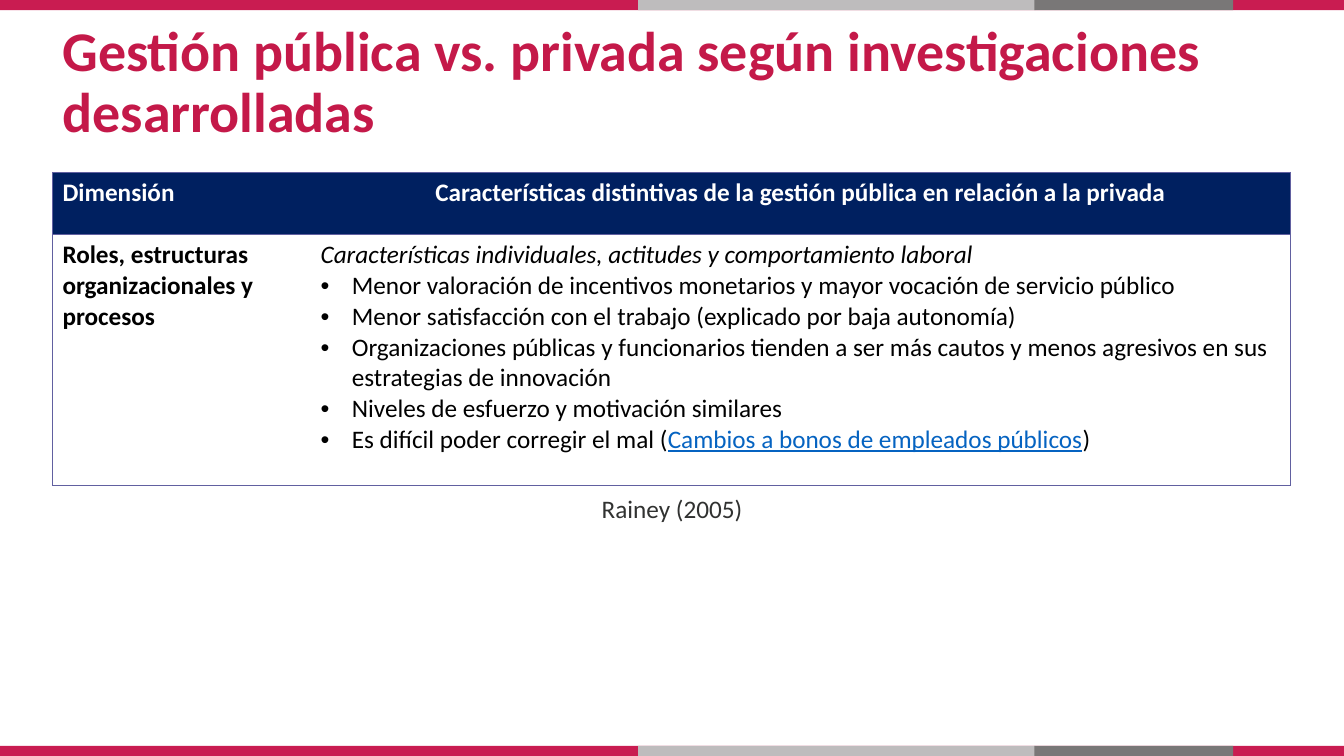
from lxml import etree
from pptx import Presentation
from pptx.dml.color import RGBColor
from pptx.enum.shapes import MSO_SHAPE
from pptx.enum.text import MSO_ANCHOR, MSO_AUTO_SIZE, PP_ALIGN
from pptx.oxml.ns import qn
from pptx.util import Inches, Pt

COLORS = {
    "crimson": "C91C51",
    "title": "C41949",
    "light_gray": "BEBCBD",
    "dark_gray": "797777",
    "navy": "002060",
    "border": "6160A0",
    "white": "FFFFFF",
    "black": "000000",
    "source": "313231",
    "link": "0563C1",
}
SLIDE_WIDTH, SLIDE_HEIGHT = 13.33, 7.5
BAND_HEIGHT = 0.1
HEADERS = ["Dimensión", "Características distintivas de la gestión pública en relación a la privada"]
DIMENSION = "Roles, estructuras organizacionales y procesos"
SUBHEADING = "Características individuales, actitudes y comportamiento laboral"
FINDINGS = [
    "Menor valoración de incentivos monetarios y mayor vocación de servicio público",
    "Menor satisfacción con el trabajo (explicado por baja autonomía)",
    "Organizaciones públicas y funcionarios tienden a ser más cautos y menos agresivos "
    "en sus estrategias de innovación",
    "Niveles de esfuerzo y motivación similares",
    "Es difícil poder corregir el mal (",
]
LINK_TEXT = "Cambios a bonos de empleados públicos"


def color(name):
    """Return the named palette color."""
    return RGBColor.from_string(COLORS[name])


def add_text(paragraph, text, size=18, ink="black", bold=False, italic=False, underline=False, align=None):
    """Append a formatted run to a paragraph."""
    if align is not None:
        paragraph.alignment = align
    run = paragraph.add_run()
    run.text = text
    font = run.font
    font.name, font.size, font.color.rgb = "Calibri", Pt(size), color(ink)
    font.bold, font.italic, font.underline = bold, italic, underline


def add_band(slide, top):
    """Draw a full-width colored band at the given height."""
    segments = [(0, SLIDE_WIDTH, "crimson"), (6.33, 3.94, "light_gray"), (10.26, 1.97, "dark_gray")]
    for left, width, fill in segments:
        shape = slide.shapes.add_shape(
            MSO_SHAPE.RECTANGLE, Inches(left), Inches(top), Inches(width), Inches(BAND_HEIGHT)
        )
        shape.shadow.inherit = False
        shape.fill.solid()
        shape.fill.fore_color.rgb = color(fill)
        shape.line.fill.background()


def place_title(slide, left, top, width, height):
    """Place and format the title placeholder."""
    title = slide.shapes.title
    title.left, title.top, title.width, title.height = map(Inches, (left, top, width, height))
    frame = title.text_frame
    frame.word_wrap = True
    frame.auto_size = MSO_AUTO_SIZE.NONE
    frame.vertical_anchor = MSO_ANCHOR.BOTTOM
    paragraph = frame.paragraphs[0]
    paragraph.line_spacing = 0.9
    add_text(paragraph, "Gestión pública vs. privada según investigaciones desarrolladas",
             size=40, ink="title", bold=True, align=PP_ALIGN.LEFT)


def format_cell(cell, fill, visible_sides):
    """Fill a cell and draw only its visible borders."""
    if fill:
        cell.fill.solid()
        cell.fill.fore_color.rgb = color(fill)
    else:
        cell.fill.background()
    properties = cell._tc.get_or_add_tcPr()
    for position, side in enumerate("LRTB"):
        line = etree.Element(qn(f"a:ln{side}"), w=str(Pt(0.75)))
        if side in visible_sides:
            solid = etree.SubElement(line, qn("a:solidFill"))
            etree.SubElement(solid, qn("a:srgbClr"), val=COLORS["border"])
        else:
            etree.SubElement(line, qn("a:noFill"))
        properties.insert(position, line)


def add_bullet(paragraph):
    """Give a paragraph a hanging bullet."""
    properties = paragraph._p.get_or_add_pPr()
    indent = Inches(0.31)
    properties.set("marL", str(indent))
    properties.set("indent", str(-indent))
    etree.SubElement(properties, qn("a:buFont"), typeface="Arial")
    etree.SubElement(properties, qn("a:buChar"), char="•")


def add_comparison_table(slide, left, top, width, height):
    """Add the table of distinctive features of public management."""
    table = slide.shapes.add_table(2, 2, Inches(left), Inches(top), Inches(width), Inches(height)).table
    dimension_width, header_height = 2.56, 0.62
    table.columns[0].width = Inches(dimension_width)
    table.columns[1].width = Inches(width - dimension_width)
    table.rows[0].height = Inches(header_height)
    table.rows[1].height = Inches(height - header_height)
    for row, fill in enumerate(["navy", None]):
        for column, sides in enumerate(["LTB", "RTB"]):
            format_cell(table.cell(row, column), fill, sides)
    for column, align in enumerate([PP_ALIGN.LEFT, PP_ALIGN.CENTER]):
        add_text(table.cell(0, column).text_frame.paragraphs[0], HEADERS[column],
                 ink="white", bold=True, align=align)
    add_text(table.cell(1, 0).text_frame.paragraphs[0], DIMENSION, bold=True)
    frame = table.cell(1, 1).text_frame
    add_text(frame.paragraphs[0], SUBHEADING, italic=True)
    for finding in FINDINGS:
        paragraph = frame.add_paragraph()
        add_bullet(paragraph)
        add_text(paragraph, finding)
    add_text(paragraph, LINK_TEXT, ink="link", underline=True)
    add_text(paragraph, ")")


def add_source(slide, left, top, width, height):
    """Add the centered citation under the table."""
    box = slide.shapes.add_textbox(Inches(left), Inches(top), Inches(width), Inches(height))
    box.text_frame.word_wrap = True
    add_text(box.text_frame.paragraphs[0], "Rainey (2005)", ink="source", align=PP_ALIGN.CENTER)


def main():
    """Build and save the presentation."""
    presentation = Presentation()
    presentation.slide_width, presentation.slide_height = Inches(SLIDE_WIDTH), Inches(SLIDE_HEIGHT)
    slide = presentation.slides.add_slide(presentation.slide_layouts[5])
    for top in (0, SLIDE_HEIGHT - BAND_HEIGHT):
        add_band(slide, top)
    place_title(slide, 0.52, 0.79, 12.28, 0.69)
    add_comparison_table(slide, 0.52, 1.71, 12.28, 3.11)
    add_source(slide, 3.79, 4.84, 5.75, 0.4)
    presentation.save("out.pptx")


if __name__ == "__main__":
    main()
